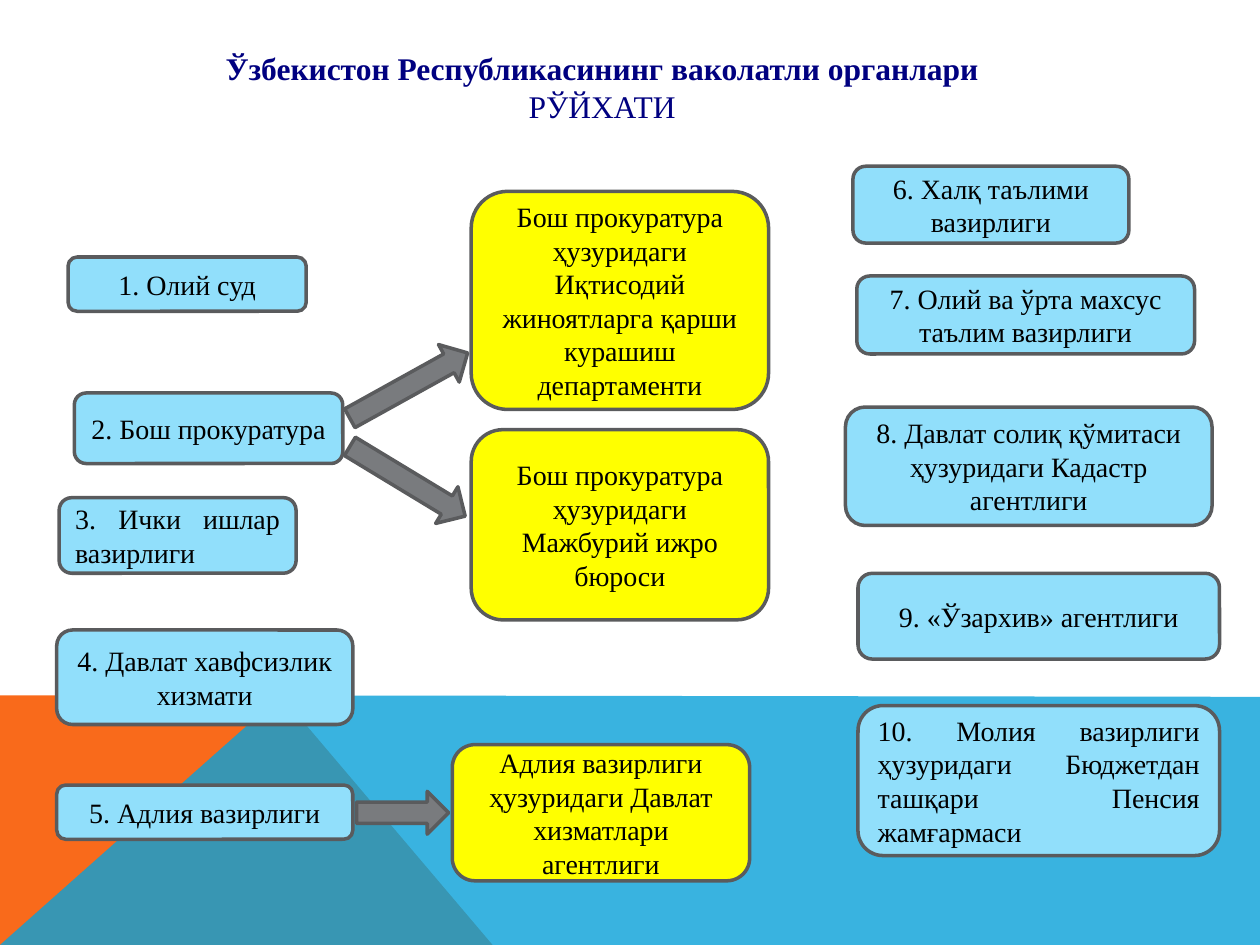
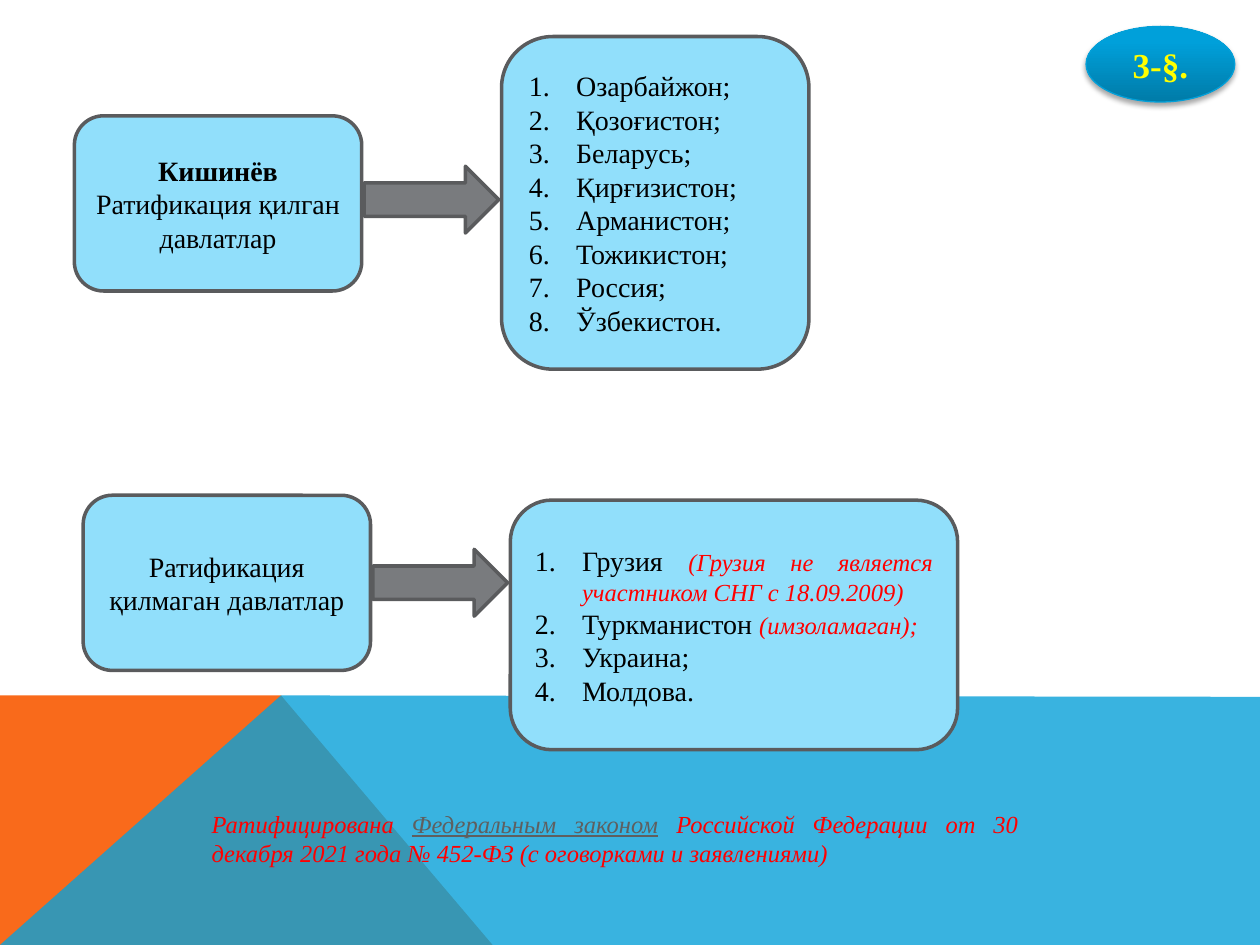
import pptx
import pptx.dml.color
import pptx.enum.shapes
import pptx.enum.text
import pptx.oxml
import pptx.oxml.ns
import pptx.util

Pt = pptx.util.Pt
Shape = pptx.enum.shapes.MSO_SHAPE
Align = pptx.enum.text.PP_ALIGN
Anchor = pptx.enum.text.MSO_ANCHOR

COLORS = {
    "orange": "F96A1B", "blue": "08A1D9", "sky": "91DFFB", "yellow": "FFFF00",
    "gray": "797B7E", "outline": "5A5B5D", "black": "000000", "navy": "000080",
    "red": "FF0000", "link": "5F5F5F", "badge_dark": "007BA8",
    "badge_light": "00A0DA", "badge_line": "03A0D9",
}
FONT = "Times New Roman"
TITLE_ONLY, BLANK = 5, 6
WIDTH, HEIGHT = 720, 540
BAND_TOP, PEAK = 397.4, 160.6


def rgb(name):
    return pptx.dml.color.RGBColor.from_string(COLORS[name])


def drawing_xml(tag, body="", **attributes):
    """Make one element of the drawing namespace."""
    listed = "".join(f' {key}="{value}"' for key, value in attributes.items())
    namespace = pptx.oxml.ns.nsdecls("a")
    return pptx.oxml.parse_xml(f"<a:{tag} {namespace}{listed}>{body}</a:{tag}>")


def add_span(para, text, size=16, color="black", bold=False, italic=False, underline=False):
    span = para.add_run()
    span.text = text
    font = span.font
    font.name, font.size, font.color.rgb = FONT, Pt(size), rgb(color)
    font.bold, font.italic, font.underline = bold, italic, underline


class SlideBuilder:
    """Holds the shared style and the slide being drawn."""

    def __init__(self):
        self.deck = pptx.Presentation()
        self.deck.slide_width, self.deck.slide_height = Pt(WIDTH), Pt(HEIGHT)
        self.page = None

    def new_page(self, layout):
        self.page = self.deck.slides.add_slide(self.deck.slide_layouts[layout])
        self.band("orange", [(0, HEIGHT), (0, BAND_TOP), (PEAK, BAND_TOP), (281.5, HEIGHT)])
        self.band("blue", [(0, HEIGHT), (PEAK, BAND_TOP), (WIDTH, BAND_TOP + 0.8),
                           (WIDTH, HEIGHT)], opacity=80)

    def band(self, color, points, opacity=100):
        corners = [(Pt(x), Pt(y)) for x, y in points]
        outline = self.page.shapes.build_freeform(*corners[0])
        outline.add_line_segments(corners[1:], close=True)
        shape = outline.convert_to_shape()
        shape.shadow.inherit = False
        shape.fill.solid()
        shape.fill.fore_color.rgb = rgb(color)
        shape.line.fill.background()
        if opacity < 100:
            fill_color = shape.element.spPr.find(".//" + pptx.oxml.ns.qn("a:srgbClr"))
            fill_color.append(drawing_xml("alpha", val=opacity * 1000))

    def fill_text(self, frame, paragraphs, align=Align.CENTER, numbered=False):
        """Each paragraph is a list of (text, format) pairs."""
        frame.word_wrap = True
        for index, spans in enumerate(paragraphs):
            para = frame.add_paragraph() if index else frame.paragraphs[0]
            para.alignment = align
            if numbered:
                properties = para._p.get_or_add_pPr()
                properties.set("marL", str(Pt(27)))
                properties.set("indent", str(-Pt(27)))
                properties.append(drawing_xml("buAutoNum", type="arabicPeriod"))
            for text, style in spans:
                add_span(para, text, **style)

    def shape(self, kind, place, fill, line="outline", weight=2):
        shape = self.page.shapes.add_shape(kind, *map(Pt, place))
        shape.shadow.inherit = False
        shape.fill.solid()
        shape.fill.fore_color.rgb = rgb(fill)
        shape.line.color.rgb = rgb(line)
        shape.line.width = Pt(weight)
        return shape

    def box(self, place, paragraphs, fill="sky", **layout):
        if isinstance(paragraphs, str):
            paragraphs = [[(paragraphs, {})]]
        shape = self.shape(Shape.ROUNDED_RECTANGLE, place, fill)
        shape.text_frame.vertical_anchor = Anchor.MIDDLE
        self.fill_text(shape.text_frame, paragraphs, **layout)

    def arrow(self, place, rotation=0):
        self.shape(Shape.RIGHT_ARROW, place, "gray").rotation = rotation

    def badge(self, place, text):
        shape = self.shape(Shape.OVAL, place, "badge_light", "badge_line", 0.75)
        shape.fill.gradient()
        shape.fill.gradient_angle = 90
        stops = zip(shape.fill.gradient_stops, ("badge_dark", "badge_light"), (0, 0.8))
        for stop, color, position in stops:
            stop.color.rgb, stop.position = rgb(color), position
        effects = shape.element.spPr.find(pptx.oxml.ns.qn("a:effectLst"))
        shade = f'<a:srgbClr val="{COLORS["black"]}"><a:alpha val="35000"/></a:srgbClr>'
        effects.append(drawing_xml("outerShdw", shade, blurRad=Pt(3.1), dist=Pt(1.8),
                                   dir=5400000, rotWithShape=0))
        shape.text_frame.vertical_anchor = Anchor.MIDDLE
        style = {"size": 20, "color": "yellow", "bold": True}
        self.fill_text(shape.text_frame, [[(text, style)]])

    def title(self, place, paragraphs):
        title = self.page.shapes.title
        title.left, title.top, title.width, title.height = map(Pt, place)
        title.text_frame.auto_size = pptx.enum.text.MSO_AUTO_SIZE.NONE
        title.text_frame.vertical_anchor = Anchor.TOP
        self.fill_text(title.text_frame, paragraphs)

    def note(self, place, spans):
        box = self.page.shapes.add_textbox(*map(Pt, place))
        self.fill_text(box.text_frame, [spans], align=Align.JUSTIFY)


def build_authorities(builder):
    builder.new_page(TITLE_ONLY)
    heading = {"size": 18, "color": "navy"}
    builder.title((120.2, 24.5, 447.8, 51.1), [
        [("Ўзбекистон Республикасининг ваколатли органлари", {**heading, "bold": True})],
        [("РЎЙХАТИ", heading)],
    ])

    # Authorities, numbered down the left and then the right side
    authorities = [
        ((38.9, 146.9, 136.1, 31), "Олий суд"),
        ((42.5, 224.6, 153.4, 40.3), "Бош прокуратура"),
        ((33.8, 284.4, 135.4, 43.2), "Ички ишлар вазирлиги"),
        ((32.4, 360, 169.2, 54), "Давлат хавфсизлик хизмати"),
        ((32.4, 448.6, 169.2, 31), "Адлия вазирлиги"),
        ((487.4, 95, 157.7, 43.9), "Халқ таълими вазирлиги"),
        ((489.6, 157.7, 193, 44.6), "Олий ва ўрта махсус таълим вазирлиги"),
        ((483.1, 232.6, 209.5, 67.7), "Давлат солиқ қўмитаси ҳузуридаги Кадастр агентлиги"),
        ((490.3, 327.6, 206.6, 49), "«Ўзархив» агентлиги"),
        ((490.3, 403.2, 206.6, 85.7),
         "Молия вазирлиги ҳузуридаги Бюджетдан ташқари Пенсия жамғармаси"),
    ]
    for number, (place, name) in enumerate(authorities, 1):
        align = Align.JUSTIFY if number in (3, 10) else Align.CENTER
        builder.box(place, f"{number}. {name}", align=align)

    # Subordinate bodies
    subordinates = [
        (269.3, 109.4, 124.6,
         "Бош прокуратура ҳузуридаги Иқтисодий жиноятларга қарши курашиш департаменти"),
        (269.3, 245.5, 108.7, "Бош прокуратура ҳузуридаги Мажбурий ижро бюроси"),
        (258.5, 425.5, 77.8, "Адлия вазирлиги ҳузуридаги Давлат хизматлари агентлиги"),
    ]
    for left, top, height, name in subordinates:
        builder.box((left, top, 169.9, height), name, fill="yellow")

    # Arrows to the subordinate bodies
    for left, top, width, rotation in [(195.1, 208.1, 77, 331), (194.4, 262.8, 77, 31.2),
                                       (203.8, 452.2, 52.6, 0)]:
        builder.arrow((left, top, width, 24.5), rotation)


def build_ratification(builder):
    builder.new_page(BLANK)
    remark = {"size": 14, "color": "red", "italic": True}
    numbered = {"align": Align.JUSTIFY, "numbered": True}

    # States that ratified
    ratified = ["Озарбайжон;", "Қозоғистон;", "Беларусь;", "Қирғизистон;",
                "Арманистон;", "Тожикистон;", "Россия;", "Ўзбекистон."]
    builder.box((286.6, 20.9, 175.7, 190.1), [[(state, {})] for state in ratified], **numbered)
    builder.box((42.5, 66.2, 164.2, 100.1),
                [[("Кишинёв ", {"bold": True}), ("Ратификация қилган давлатлар", {})]])
    builder.arrow((208.1, 95, 77, 38.2))

    # States that did not ratify
    builder.box((291.6, 285.8, 255.6, 142.6), [
        [("Грузия ", {}), ("(Грузия не является участником СНГ с 18.09.2009)", remark)],
        [("Туркманистон ", {}), ("(имзоламаган);", remark)],
        [("Украина;", {})],
        [("Молдова.", {})],
    ], **numbered)
    builder.box((47.5, 283, 164.2, 100.1), "Ратификация қилмаган давлатлар")
    builder.arrow((213.1, 313.9, 77, 38.2))

    # Section badge and footnote
    builder.badge((620.6, 15.1, 85, 43.2), "3-§.")
    builder.note((113.8, 458.6, 475.2, 41), [
        ("Ратифицирована ", remark),
        ("Федеральным законом", {**remark, "color": "link", "underline": True}),
        (" Российской Федерации от 30 декабря 2021 года № 452-ФЗ "
         "(с оговорками и заявлениями)", remark),
    ])


def main():
    builder = SlideBuilder()
    build_authorities(builder)
    build_ratification(builder)
    builder.deck.save("out.pptx")


if __name__ == "__main__":
    main()
